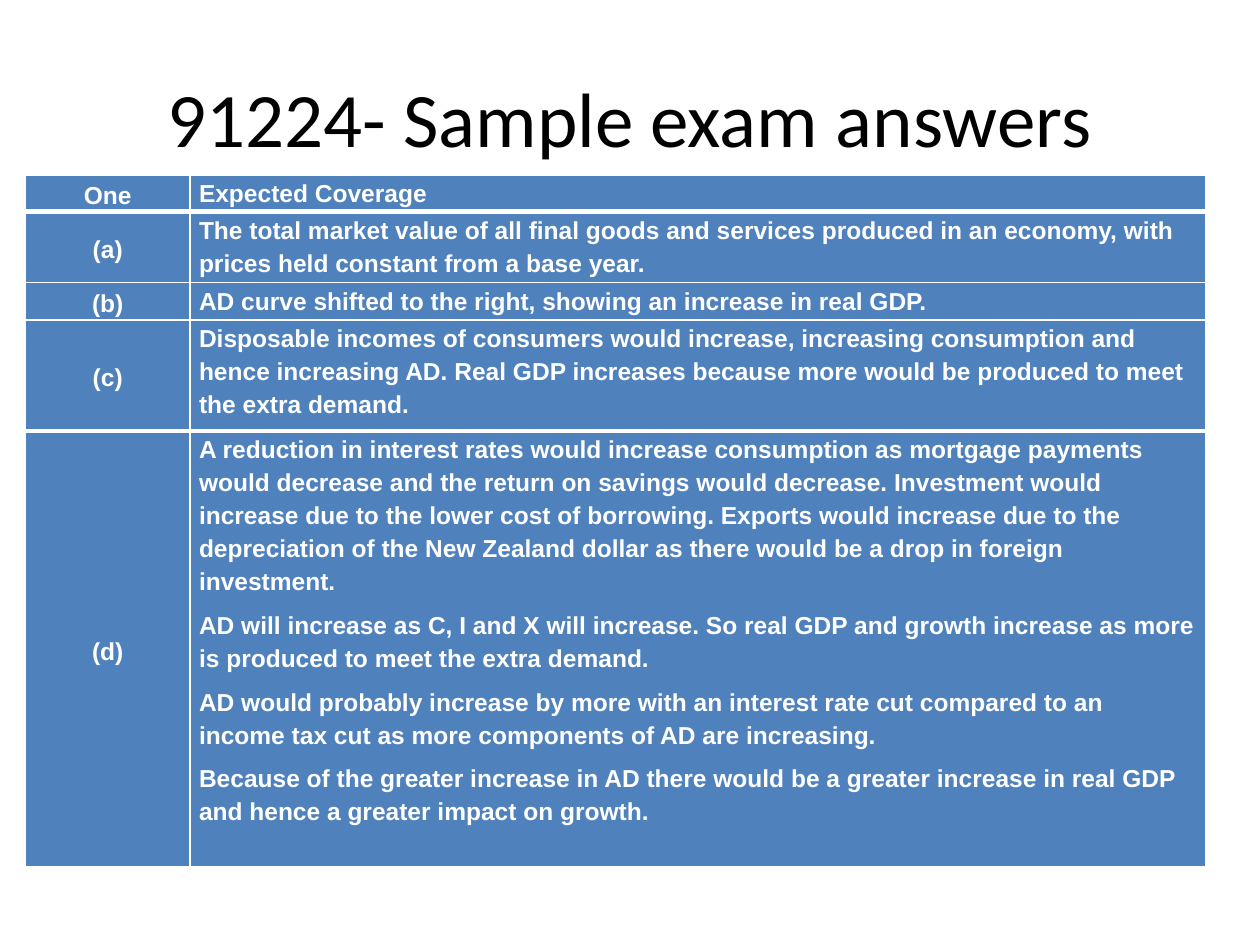
from lxml.etree import SubElement
from pptx import Presentation
from pptx.dml.color import RGBColor
from pptx.enum.text import MSO_ANCHOR, PP_ALIGN
from pptx.oxml.ns import qn
from pptx.util import Inches, Pt

TITLE = "91224- Sample exam answers"
ANSWERS = [
    ("One", 0.29, ["Expected Coverage"]),
    ("(a)", 0.52, ["The total market value of all final goods and services produced in an economy, "
                   "with prices held constant from a base year."]),
    ("(b)", 0.3, ["AD curve shifted to the right, showing an increase in real GDP."]),
    ("(c)", 0.88, ["Disposable incomes of consumers would increase, increasing consumption and "
                   "hence increasing AD. Real GDP increases because more would be produced to "
                   "meet the extra demand."]),
    ("(d)", 3.46, [
        "A reduction in interest rates would increase consumption as mortgage payments would "
        "decrease and the return on savings would decrease. Investment would increase due to "
        "the lower cost of borrowing. Exports would increase due to the depreciation of the "
        "New Zealand dollar as there would be a drop in foreign investment.",
        "AD will increase as C, I and X will increase. So real GDP and growth increase as more "
        "is produced to meet the extra demand.",
        "AD would probably increase by more with an interest rate cut compared to an income tax "
        "cut as more components of AD are increasing.",
        "Because of the greater increase in AD there would be a greater increase in real GDP "
        "and hence a greater impact on growth.",
    ]),
]
COLUMN_WIDTHS = [1.31, 8.06]
THICK_RULES = {1, len(ANSWERS) - 1}
WHITE, BLUE, BLACK = "FFFFFF", "4F81BD", "000000"


def color(value):
    return RGBColor.from_string(value)


def style_font(font, name, size, value, bold=False):
    font.name, font.size, font.bold = name, Pt(size), bold
    font.color.rgb = color(value)


def add_borders(cell, row):
    widths = {
        "lnL": 1,
        "lnR": 1,
        "lnT": 3 if row in THICK_RULES else 1,
        "lnB": 3 if row + 1 in THICK_RULES else 1,
    }
    properties = cell._tc.get_or_add_tcPr()
    for side, width in widths.items():
        line = SubElement(properties, qn(f"a:{side}"), w=str(Pt(width)))
        SubElement(SubElement(line, qn("a:solidFill")), qn("a:srgbClr"), val=WHITE)


def fill_cell(cell, row, text, anchor, alignment):
    add_borders(cell, row)
    cell.fill.solid()
    cell.fill.fore_color.rgb = color(BLUE)
    cell.vertical_anchor = anchor
    cell.margin_left = cell.margin_right = Inches(0.07)
    cell.margin_top = cell.margin_bottom = 0
    cell.text_frame.text = text
    for paragraph in cell.text_frame.paragraphs:
        paragraph.alignment = alignment
        paragraph.line_spacing = 1.2
        paragraph.space_before = paragraph.space_after = Pt(3)
        style_font(paragraph.runs[0].font, "Arial", 14, WHITE, True)


def add_title(slide):
    title = slide.shapes.add_textbox(Inches(0.5), Inches(0.3), Inches(9), Inches(1.25))
    frame = title.text_frame
    frame.word_wrap = True
    frame.vertical_anchor = MSO_ANCHOR.MIDDLE
    frame.text = TITLE
    frame.paragraphs[0].alignment = PP_ALIGN.CENTER
    style_font(frame.paragraphs[0].runs[0].font, "Calibri", 44, BLACK)


def add_answers(slide):
    total_height = sum(height for _, height, _ in ANSWERS)
    table = slide.shapes.add_table(
        len(ANSWERS), len(COLUMN_WIDTHS), Inches(0.2), Inches(1.39),
        Inches(sum(COLUMN_WIDTHS)), Inches(total_height)).table
    for column, width in zip(table.columns, COLUMN_WIDTHS):
        column.width = Inches(width)
    for row, (label, height, coverage) in enumerate(ANSWERS):
        table.rows[row].height = Inches(height)
        fill_cell(table.cell(row, 0), row, label, MSO_ANCHOR.MIDDLE, PP_ALIGN.CENTER)
        fill_cell(table.cell(row, 1), row, "\n".join(coverage), MSO_ANCHOR.TOP, PP_ALIGN.LEFT)


def main():
    deck = Presentation()
    deck.slide_width, deck.slide_height = Inches(10), Inches(7.5)
    slide = deck.slides.add_slide(deck.slide_layouts[6])
    add_title(slide)
    add_answers(slide)
    deck.save("out.pptx")


if __name__ == "__main__":
    main()
